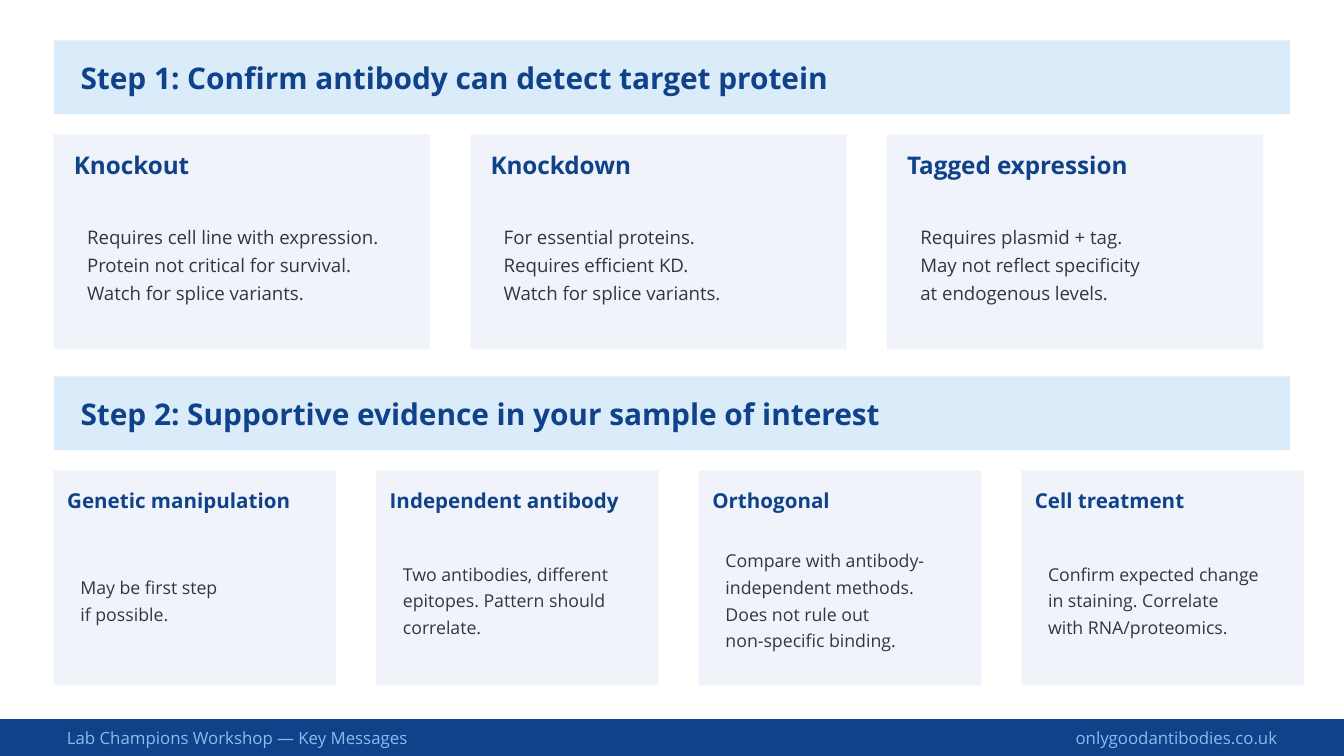
from lxml import etree
from pptx import Presentation, util as u
from pptx.dml.color import RGBColor
from pptx.enum import shapes, text
from pptx.oxml.ns import qn

HUES = {"navy": "10428A", "sky": "86BEF0", "card": "F0F4FA", "ink": "2D3748"}
LEFT, GAP = 0.4, 0.3
BAND_W, BAND_H, CARD_H = 9.2, 0.55, 1.6
FOOT_Y, FOOT_H = 5.35, 0.28

# Each step: top, title, card width, card padding, head size, body size, cards
STEPS = [
    (0.3, "Step 1: Confirm antibody can detect target protein", 2.8, 0.15, 13, 10, [
        ("Knockout", "Requires cell line with expression.\n"
         "Protein not critical for survival.\nWatch for splice variants."),
        ("Knockdown", "For essential proteins.\nRequires efficient KD.\n"
         "Watch for splice variants."),
        ("Tagged expression", "Requires plasmid + tag.\n"
         "May not reflect specificity\nat endogenous levels."),
    ]),
    (2.8, "Step 2: Supportive evidence in your sample of interest", 2.1, 0.1, 11, 9.5, [
        ("Genetic manipulation", "May be first step\nif possible."),
        ("Independent antibody", "Two antibodies, different\n"
         "epitopes. Pattern should\ncorrelate."),
        ("Orthogonal", "Compare with antibody-\nindependent methods.\n"
         "Does not rule out\nnon-specific binding."),
        ("Cell treatment", "Confirm expected change\nin staining. Correlate\n"
         "with RNA/proteomics."),
    ]),
]

deck = Presentation()
deck.slide_width, deck.slide_height = u.Inches(10), u.Inches(5.625)
slide = deck.slides.add_slide(deck.slide_layouts[6])


def block(x, y, w, h, hue, alpha=None):
    """Add a plain filled rectangle; alpha is its opacity in percent."""
    rect = slide.shapes.add_shape(
        shapes.MSO_SHAPE.RECTANGLE, *map(u.Inches, (x, y, w, h)))
    rect.shadow.inherit = False
    rect.line.fill.background()
    rect.fill.solid()
    rect.fill.fore_color.rgb = RGBColor.from_string(HUES[hue])
    if alpha:
        color = rect.element.spPr.find(qn("a:solidFill"))[0]
        etree.SubElement(color, qn("a:alpha"), val=str(alpha * 1000))


def write(words, x, y, w, h, size, hue, bold=False, inset=True, space=None, align=None):
    """Add a text box, centred top to bottom, with one paragraph per line."""
    frame = slide.shapes.add_textbox(*map(u.Inches, (x, y, w, h))).text_frame
    frame.word_wrap = True
    frame.vertical_anchor = text.MSO_ANCHOR.MIDDLE
    if not inset:
        frame.margin_left = frame.margin_right = 0
        frame.margin_top = frame.margin_bottom = 0
    frame.text = words
    for para in frame.paragraphs:
        para.line_spacing = space
        para.alignment = align
        for run in para.runs:
            run.font.name = "Open Sans"
            run.font.size = u.Pt(size)
            run.font.bold = bold
            run.font.color.rgb = RGBColor.from_string(HUES[hue])


# Footer
block(0, FOOT_Y, 10, FOOT_H, "navy")
write("Lab Champions Workshop — Key Messages", LEFT, FOOT_Y, 6, FOOT_H, 9, "sky")
write("onlygoodantibodies.co.uk", 6, FOOT_Y, 3.6, FOOT_H, 9, "sky",
      align=text.PP_ALIGN.RIGHT)

# Steps: a title band above a row of cards
for top, title, wide, pad, big, small, cards in STEPS:
    block(LEFT, top, BAND_W, BAND_H, "sky", alpha=30)
    write(title, LEFT + 0.2, top, BAND_W - 0.4, BAND_H, 16, "navy",
          bold=True, inset=False)
    row = top + 0.7
    for col, (head, body) in enumerate(cards):
        x = LEFT + col * (wide + GAP)
        block(x, row, wide, CARD_H, "card")
        write(head, x + pad, row + 0.05, wide - 2 * pad, 0.35, big, "navy",
              bold=True, inset=False)
        write(body, x + pad, row + 0.4, wide - 2 * pad, 1.1, small, "ink", space=1.25)

deck.save("out.pptx")
